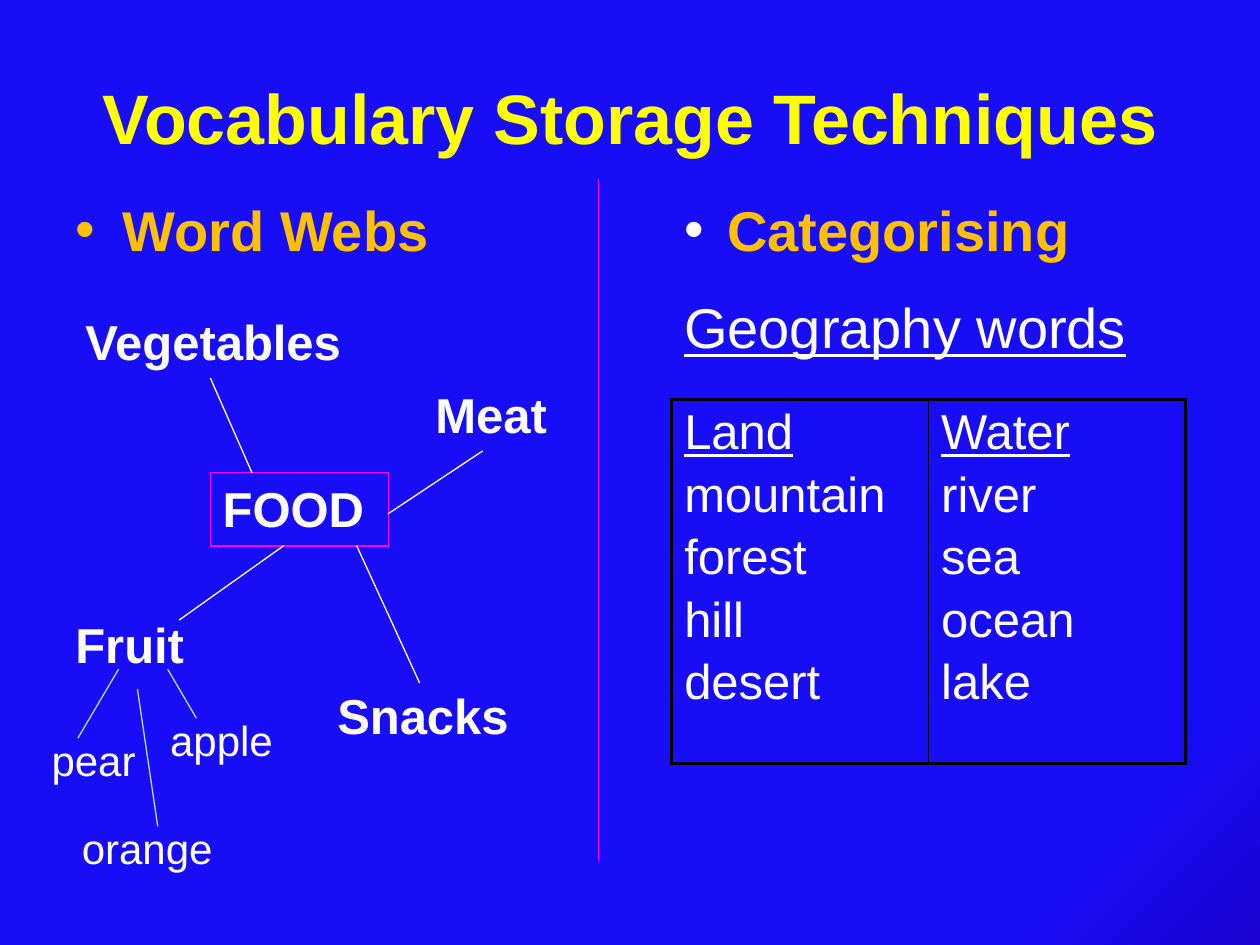
from lxml import etree
from pptx import Presentation
from pptx import util as u
from pptx.dml.color import RGBColor
from pptx.enum import shapes, text
from pptx.oxml.ns import qn

WHITE = RGBColor(0xFF, 0xFF, 0xFF)
BLACK = RGBColor(0x00, 0x00, 0x00)
YELLOW = RGBColor(0xFF, 0xFF, 0x00)
ORANGE = RGBColor(0xFF, 0xC0, 0x00)
MAGENTA = RGBColor(0xFF, 0x00, 0xFF)
PALE_BLUE = RGBColor(0xB6, 0xDC, 0xDF)
BACKGROUND = [(0, RGBColor(0x1B, 0x02, 0xD0)), (0.13, RGBColor(0x18, 0x0D, 0xF7))]

TITLE = {"size": 40, "bold": True, "color": YELLOW}
HEADING = {"size": 32, "bold": True, "color": ORANGE}
SUBHEADING = {"size": 32, "underline": True, "color": WHITE}
TOPIC = {"size": 28, "bold": True, "color": WHITE}
EXAMPLE = {"size": 24, "color": WHITE}
CATEGORY = {"size": 28, "underline": True, "color": WHITE}
WORD = {"size": 28, "color": WHITE}

TOPICS = [
    ("Fruit", (1.27, 12.27, 2.74, 1.45)),
    ("Vegetables", (1.47, 6.15, 5.87, 1.45)),
    ("Meat", (8.53, 7.62, 3.33, 1.45)),
    ("Snacks", (6.55, 13.69, 4.24, 1.45)),
]
EXAMPLES = [
    ("apple", (3.18, 14.27, 2.62, 1.3)),
    ("pear", (0.79, 14.68, 2.24, 1.3)),
    ("orange", (1.4, 16.46, 3.18, 1.3)),
]
LINES = {
    WHITE: [
        (5.08, 9.53, 4.24, 7.62),
        (5.72, 11, 3.61, 12.5),
        (7.82, 10.36, 9.73, 9.09),
        (7.19, 11, 8.46, 13.77),
    ],
    MAGENTA: [(12.07, 3.61, 12.07, 17.35)],
    PALE_BLUE: [
        (2.39, 13.49, 1.57, 14.88),
        (3.38, 13.49, 3.96, 14.48),
        (2.77, 13.89, 3.18, 16.66),
    ],
}
FOOD_BOX = (4.24, 9.53, 3.6, 1.48)
GEOGRAPHY = [
    ["Land", "mountain", "forest", "hill", "desert"],
    ["Water", "river", "sea", "ocean", "lake"],
]
TABLE_BOX = (13.54, 8.05, 10.36, 7.34)
OUTER, INNER = 2.25, 1


def lengths(values):
    return [u.Cm(value) for value in values]


def write(frame, lines, gap=0):
    for index, (words, style) in enumerate(lines):
        paragraph = frame.paragraphs[0] if index == 0 else frame.add_paragraph()
        paragraph.space_before = u.Pt(gap if index else 0)
        run = paragraph.add_run()
        run.text = words
        values = {"name": "Arial", **style, "size": u.Pt(style["size"])}
        run.font.color.rgb = values.pop("color")
        for name, value in values.items():
            setattr(run.font, name, value)


def add_text(slide, box, lines, wrap=True, gap=0):
    shape = slide.shapes.add_textbox(*lengths(box))
    shape.text_frame.word_wrap = wrap
    write(shape.text_frame, lines, gap)
    return shape.text_frame


def add_bullet(paragraph, indent, color):
    properties = paragraph._p.get_or_add_pPr()
    properties.set("marL", str(u.Cm(indent)))
    properties.set("indent", str(-u.Cm(indent)))
    bullet_color = etree.SubElement(properties, qn("a:buClr"))
    etree.SubElement(bullet_color, qn("a:srgbClr"), val=str(color))
    etree.SubElement(properties, qn("a:buFont"), typeface="Arial")
    etree.SubElement(properties, qn("a:buChar"), char="•")


def add_line(slide, ends, color):
    line = slide.shapes.add_connector(shapes.MSO_CONNECTOR.STRAIGHT, *lengths(ends))
    line.line.color.rgb = color
    line.line.width = u.Pt(0.75)
    etree.SubElement(line._element.spPr, qn("a:effectLst"))


def set_borders(cell, widths):
    properties = cell._tc.get_or_add_tcPr()
    for index, (side, width) in enumerate(zip("LRTB", widths)):
        border = etree.Element(qn(f"a:ln{side}"), w=str(u.Pt(width)))
        fill = etree.SubElement(border, qn("a:solidFill"))
        etree.SubElement(fill, qn("a:srgbClr"), val=str(BLACK))
        properties.insert(index, border)


def paint_background(slide):
    fill = slide.background.fill
    fill.gradient()
    for stop, (position, color) in zip(fill.gradient_stops, BACKGROUND):
        stop.position = position
        stop.color.rgb = color
    gradient = slide._element.find(".//" + qn("a:gradFill"))
    gradient.remove(gradient.find(qn("a:lin")))
    circle = etree.Element(qn("a:path"), path="circle")
    etree.SubElement(circle, qn("a:fillToRect"), l="100000", t="100000")
    gradient.find(qn("a:gsLst")).addnext(circle)


def add_geography_table(slide):
    table = slide.shapes.add_table(1, len(GEOGRAPHY), *lengths(TABLE_BOX)).table
    table.first_row = table.horz_banding = False
    last = len(GEOGRAPHY) - 1
    for index, (category, *words) in enumerate(GEOGRAPHY):
        cell = table.cell(0, index)
        cell.fill.background()
        write(cell.text_frame, [(category, CATEGORY)] + [(word, WORD) for word in words], 4.5)
        left = INNER if index else OUTER
        right = INNER if index < last else OUTER
        set_borders(cell, (left, right, OUTER, OUTER))


def main():
    presentation = Presentation()
    presentation.slide_width, presentation.slide_height = lengths((25.4, 19.05))
    slide = presentation.slides.add_slide(presentation.slide_layouts[6])
    paint_background(slide)

    title = add_text(slide, (1.27, 0.76, 22.86, 3.18), [("Vocabulary Storage Techniques", TITLE)])
    title.vertical_anchor = text.MSO_ANCHOR.MIDDLE
    title.paragraphs[0].alignment = text.PP_ALIGN.CENTER

    webs = add_text(slide, (1.27, 3.81, 10.59, 13.54), [("Word Webs", HEADING)])
    add_bullet(webs.paragraphs[0], 0.95, ORANGE)
    categorising = add_text(
        slide, (13.54, 3.81, 10.59, 5.66),
        [("Categorising", HEADING), ("Geography words", SUBHEADING)], gap=17.5)
    add_bullet(categorising.paragraphs[0], 0.87, WHITE)

    food = slide.shapes.add_shape(shapes.MSO_SHAPE.RECTANGLE, *lengths(FOOD_BOX))
    food.shadow.inherit = False
    food.fill.background()
    food.line.color.rgb = MAGENTA
    food.line.width = u.Pt(0.75)
    write(food.text_frame, [("FOOD", TOPIC)])
    food.text_frame.vertical_anchor = text.MSO_ANCHOR.TOP
    food.text_frame.paragraphs[0].alignment = text.PP_ALIGN.LEFT

    for words, box in TOPICS:
        add_text(slide, box, [(words, TOPIC)])
    for words, box in EXAMPLES:
        add_text(slide, box, [(words, EXAMPLE)], wrap=False)
    add_geography_table(slide)
    for color, group in LINES.items():
        for ends in group:
            add_line(slide, ends, color)

    presentation.save("out.pptx")


if __name__ == "__main__":
    main()
